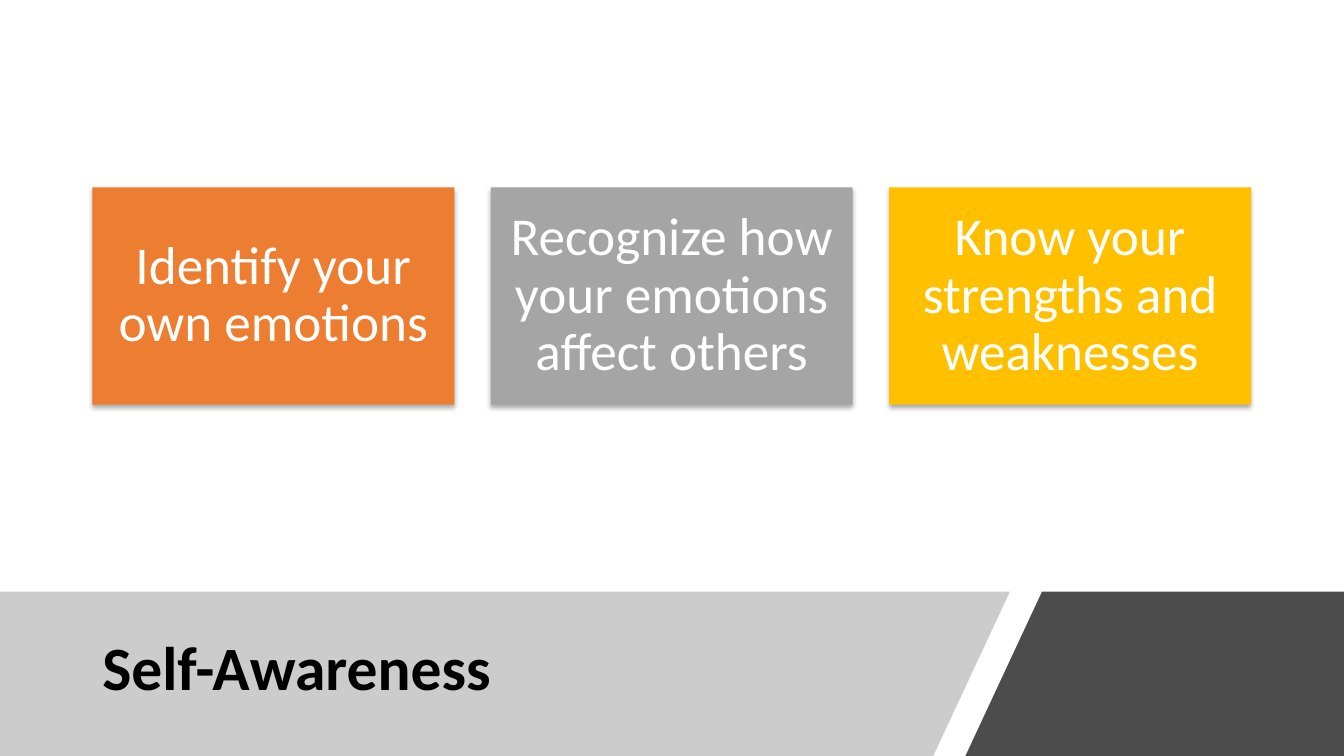
from dataclasses import dataclass

from lxml import etree
from pptx import Presentation
from pptx import util as u
from pptx.dml.color import RGBColor
from pptx.enum import shapes, text
from pptx.oxml import ns

COLORS = {
    "black": "000000",
    "white": "FFFFFF",
    "gray": "808080",
    "orange": "ED7D31",
    "silver": "A5A5A5",
    "gold": "FFC000",
}
FONT = "Calibri"
PAGE_WIDTH, PAGE_HEIGHT = 33.87, 19.05
BAND_TOP = 14.91
CARD_LEFT, CARD_TOP, CARD_WIDTH, CARD_HEIGHT = 2.33, 4.72, 9.12, 5.48
CARD_STEP = 10.04


@dataclass
class Band:
    points: list[tuple[float, float]]
    color: str
    opacity: int


@dataclass
class Card:
    wording: str
    color: str


BANDS = [
    Band([(0, BAND_TOP), (25.45, BAND_TOP), (23.52, PAGE_HEIGHT), (0, PAGE_HEIGHT)],
         "gray", 40),
    Band([(26.26, BAND_TOP), (PAGE_WIDTH, BAND_TOP), (PAGE_WIDTH, PAGE_HEIGHT),
          (24.33, PAGE_HEIGHT)], "black", 70),
]
CARDS = [
    Card("Identify your own emotions", "orange"),
    Card("Recognize how your emotions affect others", "silver"),
    Card("Know your strengths and weaknesses", "gold"),
]


def paint(shape, color: str) -> None:
    shape.shadow.inherit = False
    shape.fill.solid()
    shape.fill.fore_color.rgb = RGBColor.from_string(COLORS[color])
    shape.line.fill.background()


def set_opacity(color_element, percent: int) -> None:
    etree.SubElement(color_element, ns.qn("a:alpha"), val=str(percent * 1000))


def add_soft_shadow(shape) -> None:
    effects = shape._element.spPr.find(ns.qn("a:effectLst"))
    shadow = etree.SubElement(
        effects, ns.qn("a:outerShdw"), blurRad=str(u.Pt(3.5)), dist=str(u.Pt(2.2)),
        dir=str(90 * 60000), algn="ctr", rotWithShape="0")
    color = etree.SubElement(shadow, ns.qn("a:srgbClr"), val=COLORS["black"])
    set_opacity(color, 32)


def write(shape, wording: str, size: int, color: str, align, bold: bool = False) -> None:
    frame = shape.text_frame
    frame.word_wrap = True
    frame.vertical_anchor = text.MSO_ANCHOR.MIDDLE
    para = frame.paragraphs[0]
    para.text = wording
    para.alignment = align
    para.line_spacing = 0.9
    para.font.name = FONT
    para.font.size = u.Pt(size)
    para.font.bold = bold
    para.font.color.rgb = RGBColor.from_string(COLORS[color])


def draw_band(page, band: Band) -> None:
    start, *others = [(u.Cm(x), u.Cm(y)) for x, y in band.points]
    builder = page.shapes.build_freeform(*start)
    builder.add_line_segments(others, close=True)
    shape = builder.convert_to_shape()
    paint(shape, band.color)
    fill_color = shape._element.spPr.find(ns.qn("a:solidFill"))[0]
    set_opacity(fill_color, band.opacity)


def draw_card(page, card: Card, left: float) -> None:
    box = page.shapes.add_shape(
        shapes.MSO_SHAPE.RECTANGLE, u.Cm(left), u.Cm(CARD_TOP),
        u.Cm(CARD_WIDTH), u.Cm(CARD_HEIGHT))
    paint(box, card.color)
    add_soft_shadow(box)
    frame = box.text_frame
    frame.margin_left = frame.margin_right = u.Cm(0.4)
    frame.margin_top = frame.margin_bottom = u.Cm(0.4)
    write(box, card.wording, 38, "white", text.PP_ALIGN.CENTER)


def main() -> None:
    deck = Presentation()
    deck.slide_width, deck.slide_height = u.Cm(PAGE_WIDTH), u.Cm(PAGE_HEIGHT)
    page = deck.slides.add_slide(deck.slide_layouts[6])

    # Slanted bands along the bottom
    for band in BANDS:
        draw_band(page, band)

    # Title on the light band
    title = page.shapes.add_textbox(
        u.Cm(CARD_LEFT), u.Cm(15.37), u.Cm(21.44), u.Cm(3.05))
    write(title, "Self-Awareness", 44, "black", text.PP_ALIGN.LEFT, bold=True)

    # Row of cards
    for index, card in enumerate(CARDS):
        draw_card(page, card, CARD_LEFT + index * CARD_STEP)

    deck.save("out.pptx")


if __name__ == "__main__":
    main()
